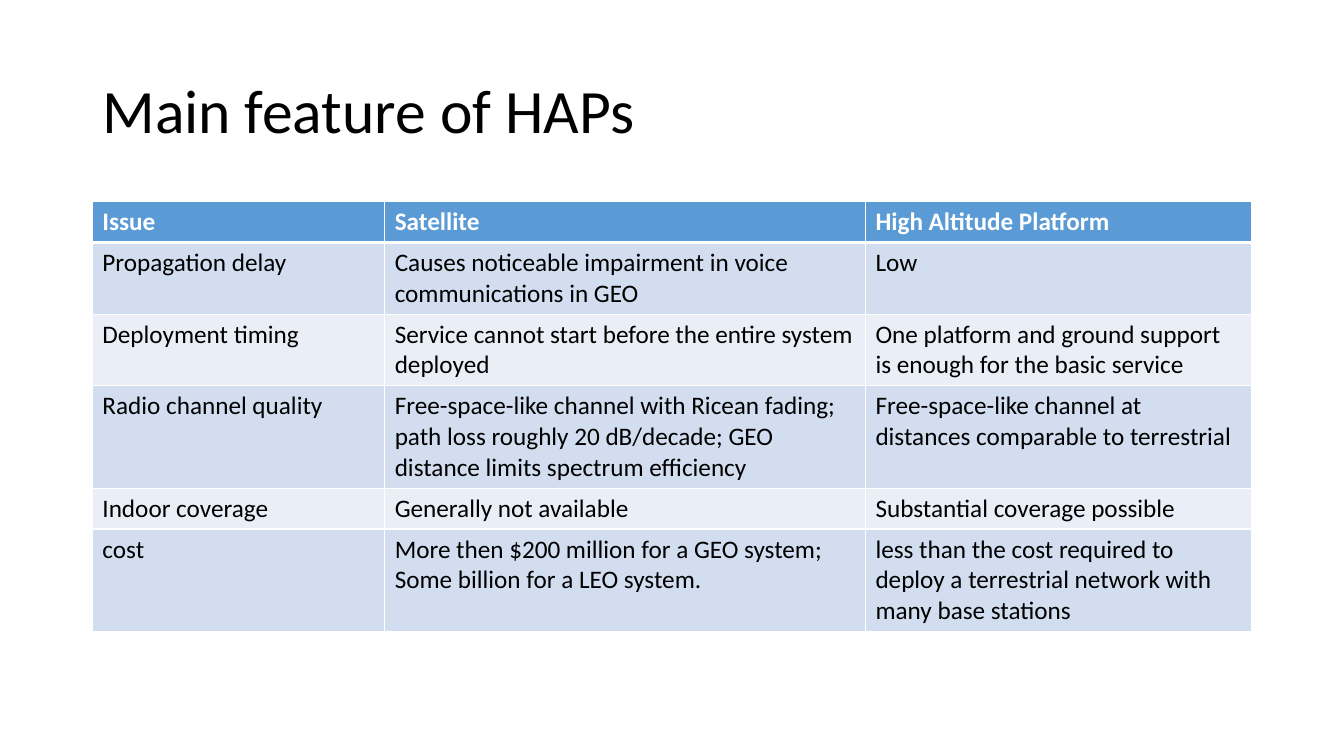
"""Build the slide that compares satellites with high altitude platforms."""
from dataclasses import dataclass

from lxml import etree
from pptx import Presentation
from pptx.dml import color
from pptx.enum import text
from pptx.oxml import ns
from pptx.util import Pt

TITLE = "Main feature of HAPs"
HEADER = ("Issue", "Satellite", "High Altitude Platform")
ISSUES = [
    ("Propagation delay",
     "Causes noticeable impairment in voice communications in GEO",
     "Low"),
    ("Deployment timing",
     "Service cannot start before the entire system deployed",
     "One platform and ground support is enough for the basic service"),
    ("Radio channel quality",
     "Free-space-like channel with Ricean fading; path loss roughly 20 dB/decade; "
     "GEO distance limits spectrum efficiency",
     "Free-space-like channel at distances comparable to terrestrial"),
    ("Indoor coverage",
     "Generally not available",
     "Substantial coverage possible"),
    ("cost",
     "More then $200 million for a GEO system; Some billion for a LEO system.",
     "less than the cost required to deploy a terrestrial network with many base stations"),
]
ROW_LINES = (1, 2, 2, 3, 1, 3)
COLUMN_WIDTHS = (208.8, 343.4, 275.8)
LEFT, WIDTH = 66, 828
TITLE_TOP, TITLE_HEIGHT = 28.75, 104.4
TABLE_TOP = 144
CELL_PADDING, LINE_HEIGHT = 7.2, 21.6


@dataclass(frozen=True)
class Theme:
    """Colours, font and sizes of the slide."""
    font: str = "Calibri"
    title_size: int = 44
    table_size: int = 18
    ink: str = "000000"
    white: str = "FFFFFF"
    header_fill: str = "5B9BD5"
    band_fills: tuple = ("D2DEEF", "EAEFF7")
    thin: int = 1
    thick: int = 3


THEME = Theme()


def add_run(paragraph, content, size, colour, bold=False):
    """Add one formatted run to a paragraph."""
    run = paragraph.add_run()
    run.text = content
    run.font.name = THEME.font
    run.font.size = Pt(size)
    run.font.bold = bold
    run.font.color.rgb = color.RGBColor.from_string(colour)


def add_borders(cell, widths):
    """Draw white borders on the left, right, top and bottom of a cell."""
    properties = cell._tc.get_or_add_tcPr()
    for side, width in zip(("lnL", "lnR", "lnT", "lnB"), widths):
        line = etree.SubElement(properties, ns.qn(f"a:{side}"), w=str(Pt(width)))
        fill = etree.SubElement(line, ns.qn("a:solidFill"))
        etree.SubElement(fill, ns.qn("a:srgbClr"), val=THEME.white)


def add_title(slide):
    """Place and fill the title placeholder."""
    title = slide.shapes.title
    title.left, title.top = Pt(LEFT), Pt(TITLE_TOP)
    title.width, title.height = Pt(WIDTH), Pt(TITLE_HEIGHT)
    frame = title.text_frame
    frame.word_wrap = True
    frame.auto_size = text.MSO_AUTO_SIZE.NONE
    frame.vertical_anchor = text.MSO_ANCHOR.MIDDLE
    paragraph = frame.paragraphs[0]
    paragraph.alignment = text.PP_ALIGN.LEFT
    paragraph.line_spacing = 0.9
    add_run(paragraph, TITLE, THEME.title_size, THEME.ink)


def add_comparison(slide):
    """Add the comparison table with a header and banded rows."""
    rows = [HEADER, *ISSUES]
    heights = [CELL_PADDING + LINE_HEIGHT * lines for lines in ROW_LINES]
    table = slide.shapes.add_table(
        len(rows), len(HEADER), Pt(LEFT), Pt(TABLE_TOP), Pt(WIDTH), Pt(sum(heights))).table
    for column, width in zip(table.columns, COLUMN_WIDTHS):
        column.width = Pt(width)
    for index, (row, height, contents) in enumerate(zip(table.rows, heights, rows)):
        row.height = Pt(height)
        header = index == 0
        fill = THEME.header_fill if header else THEME.band_fills[(index - 1) % 2]
        top = THEME.thick if index == 1 else THEME.thin
        bottom = THEME.thick if header else THEME.thin
        for cell, content in zip(row.cells, contents):
            add_borders(cell, (THEME.thin, THEME.thin, top, bottom))
            cell.fill.solid()
            cell.fill.fore_color.rgb = color.RGBColor.from_string(fill)
            add_run(cell.text_frame.paragraphs[0], content, THEME.table_size,
                    THEME.white if header else THEME.ink, header)


def main():
    """Create and save the presentation."""
    presentation = Presentation()
    presentation.slide_width, presentation.slide_height = Pt(960), Pt(540)
    slide = presentation.slides.add_slide(presentation.slide_layouts[5])
    add_title(slide)
    add_comparison(slide)
    presentation.save("out.pptx")


if __name__ == "__main__":
    main()
